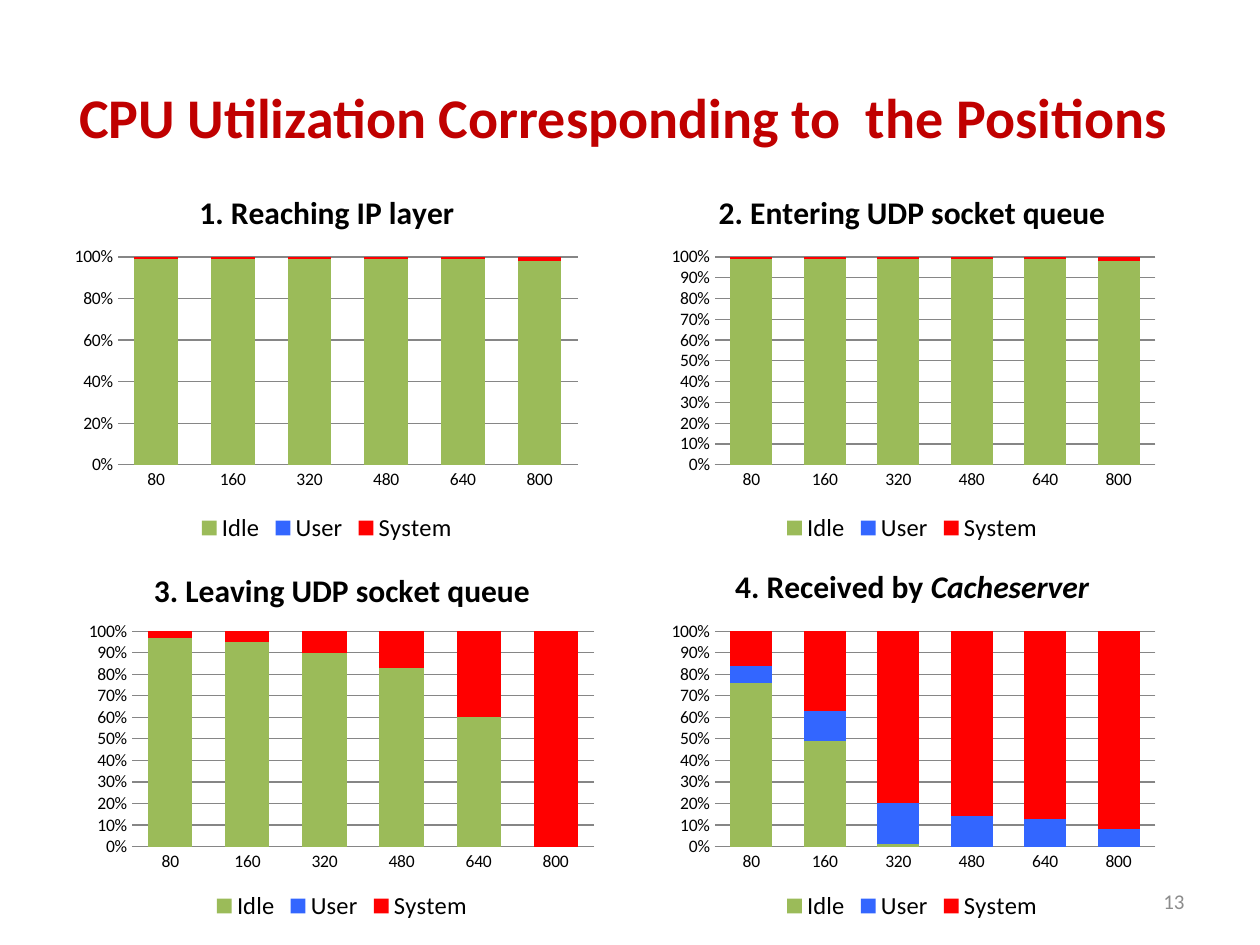
"""Build the slide of CPU utilization charts for four packet positions."""
from dataclasses import dataclass

from pptx import Presentation
from pptx.chart.chart import Chart
from pptx.chart.data import CategoryChartData
from pptx.dml.color import RGBColor
from pptx.enum.chart import XL_CHART_TYPE as ChartType
from pptx.enum.chart import XL_LEGEND_POSITION as LegendPos
from pptx.enum.chart import XL_TICK_MARK as TickMark
from pptx.enum.text import MSO_ANCHOR as Anchor
from pptx.enum.text import PP_ALIGN as Align
from pptx.oxml import parse_xml
from pptx.oxml.ns import nsdecls
from pptx.util import Inches, Pt

FONT = "Calibri"
RATES = ("80", "160", "320", "480", "640", "800")
SERIES = {"Idle": "9BBB59", "User": "3366FF", "System": "FF0000"}
NONE = (0,) * len(RATES)
NEARLY_IDLE = ((99, 99, 99, 99, 99, 98), NONE, (1, 1, 1, 1, 1, 2))
CHART_H = 3
PLOT_RIGHT = 0.98


@dataclass(frozen=True)
class UsageChart:
    """Place, title and values of one chart."""
    left: float
    top: float
    width: float
    plot: tuple[float, float, float]
    title: str
    values: tuple[tuple[int, ...], ...]
    step: float = 0.1
    italic: str = ""


CHARTS = (
    UsageChart(0.52, 1.35, 4.15, (0.1, 0.23, 0.55), "1. Reaching IP layer",
               NEARLY_IDLE, step=0.2),
    UsageChart(5.23, 1.35, 4.02, (0.11, 0.23, 0.55),
               "2. Entering UDP socket queue", NEARLY_IDLE),
    UsageChart(0.63, 4.35, 4.17, (0.1, 0.22, 0.57),
               "3. Leaving UDP socket queue",
               ((97, 95, 90, 83, 60, 0), NONE, (3, 5, 10, 17, 40, 100))),
    UsageChart(5.23, 4.35, 4.02, (0.11, 0.22, 0.57), "4. Received by ",
               ((76, 49, 1, 0, 0, 0), (8, 14, 19, 14, 13, 8),
                (16, 37, 80, 86, 87, 92)), italic="Cacheserver"),
)


def rgb(color: str) -> RGBColor:
    """Turn a hex string into a colour."""
    return RGBColor.from_string(color)


def add_run(p, text: str, size: float, color: str, bold: bool = False,
            italic: bool = False) -> None:
    """Add one formatted run to a paragraph."""
    r = p.add_run()
    r.text = text
    r.font.name = FONT
    r.font.size = Pt(size)
    r.font.color.rgb = rgb(color)
    r.font.bold = bold
    r.font.italic = italic


def place_plot(chart: Chart, left: float, top: float, height: float) -> None:
    """Fix the inner plot area as fractions of the chart."""
    area = chart.element.xpath("c:chart/c:plotArea")[0]
    for old in area.xpath("c:layout"):
        area.remove(old)
    area.insert(0, parse_xml(
        f'<c:layout {nsdecls("c")}><c:manualLayout>'
        '<c:layoutTarget val="inner"/>'
        '<c:xMode val="edge"/><c:yMode val="edge"/>'
        f'<c:x val="{left}"/><c:y val="{top}"/>'
        f'<c:w val="{PLOT_RIGHT - left:.2f}"/><c:h val="{height}"/>'
        '</c:manualLayout></c:layout>'))


def style_axes(chart: Chart, step: float) -> None:
    """Format the rate axis and the percentage axis."""
    rates, share = chart.category_axis, chart.value_axis
    for axis in (rates, share):
        axis.major_tick_mark = axis.minor_tick_mark = TickMark.NONE
    share.minimum_scale = 0
    share.major_unit = step
    share.has_major_gridlines = True
    share.tick_labels.number_format = "0%"
    share.tick_labels.number_format_is_linked = False
    share.format.line.fill.background()
    for line in (rates.format.line, share.major_gridlines.format.line):
        line.color.rgb = rgb("868686")
        line.width = Pt(0.75)


def add_usage_chart(s, item: UsageChart) -> None:
    """Draw one stacked percentage chart."""
    data = CategoryChartData()
    data.categories = RATES
    for name, values in zip(SERIES, item.values):
        data.add_series(name, values)
    chart = s.shapes.add_chart(
        ChartType.COLUMN_STACKED_100, Inches(item.left), Inches(item.top),
        Inches(item.width), Inches(CHART_H), data).chart
    chart.font.name = FONT
    chart.font.size = Pt(10)
    chart.font.color.rgb = rgb("000000")

    chart.has_title = True
    p = chart.chart_title.text_frame.paragraphs[0]
    add_run(p, item.title, 18, "000000", bold=True)
    if item.italic:
        add_run(p, item.italic, 18, "000000", bold=True, italic=True)

    chart.has_legend = True
    chart.legend.position = LegendPos.BOTTOM
    chart.legend.include_in_layout = False
    chart.legend.font.size = Pt(14)
    chart.legend.font.name = FONT

    plot = chart.plots[0]
    plot.gap_width = 75
    plot.overlap = 100
    plot.vary_by_categories = False
    for series, color in zip(plot.series, SERIES.values()):
        series.format.fill.solid()
        series.format.fill.fore_color.rgb = rgb(color)
    style_axes(chart, item.step)
    place_plot(chart, *item.plot)


def add_title(s, text: str) -> None:
    """Place and fill the title placeholder."""
    sp = s.shapes.title
    sp.left, sp.top = Inches(0.45), Inches(0.3)
    sp.width, sp.height = Inches(9), Inches(1.25)
    tf = sp.text_frame
    tf.vertical_anchor = Anchor.MIDDLE
    p = tf.paragraphs[0]
    p.alignment = Align.CENTER
    add_run(p, text, 32, "C00000", bold=True)


def add_page_number(s, text: str) -> None:
    """Write the page number at the lower right."""
    sp = s.shapes.add_textbox(Inches(7.17), Inches(6.95), Inches(2.33), Inches(0.4))
    tf = sp.text_frame
    tf.word_wrap = True
    tf.vertical_anchor = Anchor.MIDDLE
    p = tf.paragraphs[0]
    p.alignment = Align.RIGHT
    add_run(p, text, 12, "8C8C8C")


def main() -> None:
    """Build and save the presentation."""
    prs = Presentation()
    prs.slide_width, prs.slide_height = Inches(10), Inches(7.5)
    s = prs.slides.add_slide(prs.slide_layouts[5])
    add_title(s, "CPU Utilization Corresponding to  the Positions")
    add_page_number(s, "13")
    for item in CHARTS:
        add_usage_chart(s, item)
    prs.save("out.pptx")


if __name__ == "__main__":
    main()
